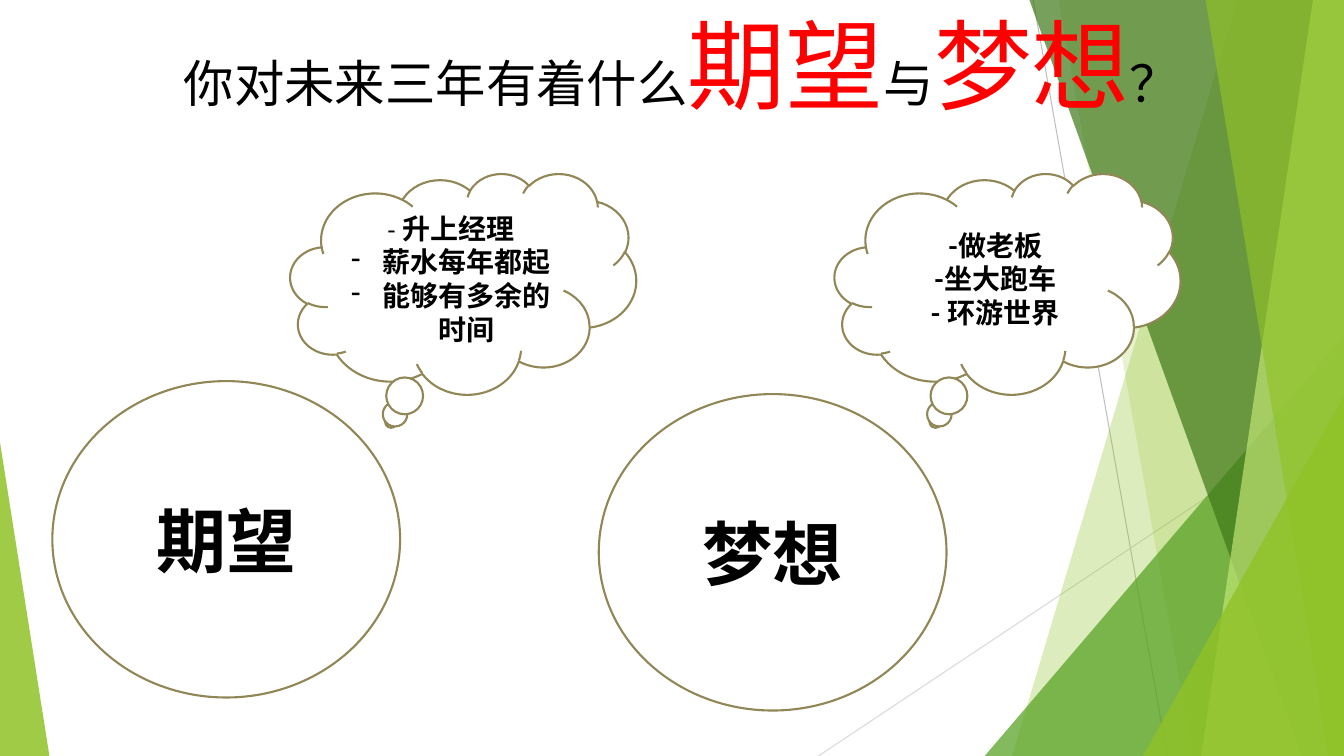
"""Build a slide about hopes and dreams for the next three years."""
from dataclasses import dataclass

from lxml import etree
from pptx import Presentation
from pptx import util as u
from pptx.dml.color import RGBColor
from pptx.enum import shapes, text
from pptx.oxml.ns import qn

Pt = u.Pt
WIDE, HIGH = 960, 540


@dataclass(frozen=True)
class Theme:
    font: str = "Lato"
    ink: str = "000000"
    red: str = "FF0000"
    paper: str = "FFFFFF"
    edge: str = "918655"
    lime: str = "90C226"
    leaf: str = "54A021"
    moss: str = "3F7819"
    pale: str = "C0E474"
    ray: str = "BFBFBF"
    mist: str = "D9D9D9"
    title: int = 36
    shout: int = 70
    label: int = 50
    note: int = 20
    dash: int = 18


THEME = Theme()


def paint(shape, color, alpha=100, edge=None):
    shape.shadow.inherit = False
    shape.fill.solid()
    shape.fill.fore_color.rgb = RGBColor.from_string(color)
    if alpha < 100:
        tint = shape.fill._xPr.find(f".//{qn('a:srgbClr')}")
        etree.SubElement(tint, qn("a:alpha"), val=str(alpha * 1000))
    if edge:
        shape.line.color.rgb = RGBColor.from_string(edge)
        shape.line.width = Pt(1.5)
    else:
        shape.line.fill.background()


def style(font, size, color=THEME.ink, bold=False):
    font.name, font.size, font.bold = THEME.font, Pt(size), bold
    font.color.rgb = RGBColor.from_string(color)


def add_ray(slide, start, end, color):
    ends = [Pt(n) for n in (*start, *end)]
    line = slide.shapes.add_connector(shapes.MSO_CONNECTOR.STRAIGHT, *ends)
    line.line.color.rgb = RGBColor.from_string(color)
    line.line.width = Pt(0.75)
    etree.SubElement(line._element.spPr, qn("a:effectLst"))


def add_facet(slide, top, base, color, alpha):
    pen = slide.shapes.build_freeform(top, -0.6, scale=Pt(1))
    pen.add_line_segments([(WIDE, -0.6), (WIDE, HIGH), (base, HIGH)])
    paint(pen.convert_to_shape(), color, alpha)


def add_wedge(slide, left, top, width, apex, color, alpha):
    box = [Pt(n) for n in (left, top, width, HIGH - top)]
    wedge = slide.shapes.add_shape(shapes.MSO_SHAPE.ISOSCELES_TRIANGLE, *box)
    wedge.adjustments[0] = apex
    paint(wedge, color, alpha)


def add_back(slide):
    add_ray(slide, (738, 0), (833.8, HIGH), THEME.ray)
    add_ray(slide, (WIDE, 290), (584.6, HIGH), THEME.mist)
    add_facet(slide, 884.2, 722.9, THEME.lime, 30)
    add_facet(slide, 756, 851.8, THEME.lime, 20)
    add_wedge(slide, 703.4, 239.8, 256.6, 1, THEME.leaf, 72)
    add_facet(slide, 735.1, 929.5, THEME.moss, 70)
    add_facet(slide, 938.2, 858.2, THEME.pale, 70)
    add_facet(slide, 861.1, 949, THEME.lime, 65)
    add_wedge(slide, 816.5, 283, 143.5, 1, THEME.lime, 80)
    add_wedge(slide, 0, 316, 35.3, 0, THEME.lime, 85)


def add_title(slide, parts):
    box = slide.shapes.add_textbox(Pt(73.2), 0, Pt(828), Pt(104.4))
    box.text_frame.word_wrap = True
    para = box.text_frame.paragraphs[0]
    para.alignment = text.PP_ALIGN.CENTER
    for words, loud in parts:
        run = para.add_run()
        run.text = words
        size = THEME.shout if loud else THEME.title
        style(run.font, size, THEME.red if loud else THEME.ink)


def add_bubble(slide, kind, box, lines, size):
    bubble = slide.shapes.add_shape(kind, *[Pt(n) for n in box])
    paint(bubble, THEME.paper, edge=THEME.edge)
    frame = bubble.text_frame
    frame.word_wrap = True
    frame.vertical_anchor = text.MSO_ANCHOR.MIDDLE
    frame.text = "\n".join(lines)
    for para in frame.paragraphs:
        para.alignment = text.PP_ALIGN.CENTER
        style(para.font, size, bold=True)
    return frame.paragraphs


def add_cloud(slide, left, lines):
    kind = shapes.MSO_SHAPE.CLOUD_CALLOUT
    box = (left, 123.8, 247, 157.7)
    return add_bubble(slide, kind, box, lines, THEME.note)


def add_dash(para):
    prop = para._p.get_or_add_pPr()
    prop.set("marL", str(Pt(22.5)))
    prop.set("indent", str(-Pt(22.5)))
    prop.insert(0, etree.Element(qn("a:buChar"), char="-"))


def main():
    deck = Presentation()
    deck.slide_width, deck.slide_height = Pt(WIDE), Pt(HIGH)
    slide = deck.slides.add_slide(deck.slide_layouts[6])
    add_back(slide)
    add_title(slide, [("你对未来三年有着什么", False), ("期望", True),
                      ("与", False), ("梦想", True), ("？", False)])

    oval = shapes.MSO_SHAPE.OVAL
    for left, top, word in [(37.4, 272.2, "期望"), (427.7, 281.5, "梦想")]:
        add_bubble(slide, oval, (left, top, 248.4, 226), [word], THEME.label)

    hopes = ["", "薪水每年都起", "能够有多余的时间"]
    first, *rest = add_cloud(slide, 207.4, hopes)
    for words, size, bold in [("- ", THEME.dash, False),
                              ("升上经理", THEME.note, True)]:
        run = first.add_run()
        run.text = words
        style(run.font, size, bold=bold)
    for para in rest:
        add_dash(para)
    add_cloud(slide, 596.2, ["-做老板", "-坐大跑车", "- 环游世界"])
    deck.save("out.pptx")


if __name__ == "__main__":
    main()
